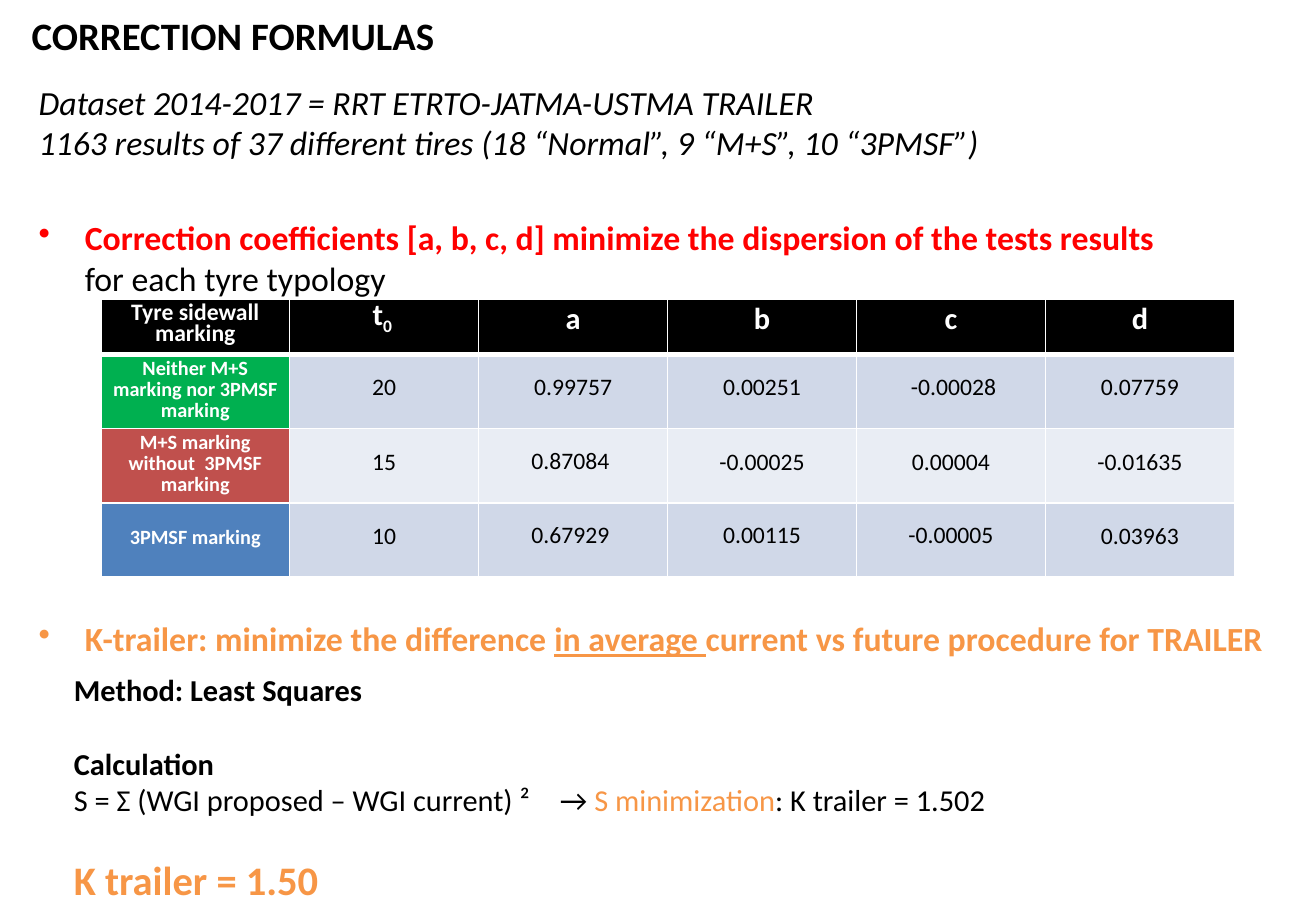
from dataclasses import dataclass, field
from typing import Any

from lxml import etree
from pptx import Presentation
from pptx import util as u
from pptx.dml.color import RGBColor
from pptx.enum import text
from pptx.oxml import ns


@dataclass(frozen=True)
class Theme:
    font: str = "Calibri"
    black: str = "000000"
    white: str = "FFFFFF"
    red: str = "FF0000"
    orange: str = "F79646"
    markings: tuple[str, ...] = ("00B050", "C0504D", "4F81BD")
    bands: tuple[str, ...] = ("D0D8E8", "E9EDF4")
    title: int = 23
    lead: int = 20
    body: int = 18
    result: int = 24
    value: int = 14
    marking: int = 12


THEME = Theme()


@dataclass
class Span:
    """A piece of text; a newline in it becomes a line break."""
    words: str
    size: int = THEME.body
    color: str = THEME.black
    style: dict[str, bool] = field(default_factory=dict)
    baseline: int = 0


@dataclass
class Para:
    spans: list[Span]
    layout: dict[str, Any] = field(default_factory=dict)
    bullet: bool = False


@dataclass
class TextBox:
    place: tuple[float, float, float, float]
    paras: list[Para]
    frame: dict[str, Any] = field(default_factory=lambda: {"word_wrap": True})


BOLD = {"bold": True}
ITALIC = {"italic": True}

TEXT_BOXES = [
    # Dataset and first bullet
    TextBox((0.22, 0.62, 10.17, 1.84), [
        Para([Span("Dataset 2014-2017 = RRT ETRTO-JATMA-USTMA TRAILER\n"
                   "1163 results of 37 different tires (18 “Normal”, 9 “M+S”, 10 “3PMSF”)",
                   THEME.lead, style=ITALIC)]),
        Para([Span("Correction coefficients [a, b, c, d] minimize the dispersion "
                   "of the tests results\n", THEME.lead, THEME.red, BOLD),
              Span("for each tyre typology", THEME.lead)],
             {"space_before": u.Pt(32.4)}, bullet=True),
    ]),
    # Title
    TextBox((0.14, 0.07, 4.9, 0.44),
            [Para([Span("CORRECTION FORMULAS", THEME.title, style=BOLD)])],
            {"word_wrap": False, "vertical_anchor": text.MSO_ANCHOR.MIDDLE,
             "margin_left": u.Inches(0.12), "margin_right": u.Inches(0.12),
             "margin_top": u.Inches(0.06), "margin_bottom": u.Inches(0.06)}),
    # Method, calculation and result
    TextBox((0.51, 5.48, 9.49, 2.02), [
        Para([Span("Method: Least Squares", style=BOLD)]),
        Para([Span("Calculation", style=BOLD)], {"space_before": u.Pt(22)}),
        Para([Span("S = Σ (WGI proposed – WGI current) ²\t→ "),
              Span("S minimization", color=THEME.orange),
              Span(": K trailer = 1.502")]),
        Para([Span("K trailer = 1.50", THEME.result, THEME.orange, BOLD)],
             {"space_before": u.Pt(22)}),
    ]),
    # Second bullet
    TextBox((0.22, 5.04, 10.4, 0.44), [
        Para([Span("K-trailer: minimize the difference ", THEME.lead, THEME.orange, BOLD),
              Span("in average ", THEME.lead, THEME.orange, {"bold": True, "underline": True}),
              Span("current vs future procedure for TRAILER",
                   THEME.lead, THEME.orange, BOLD)], bullet=True),
    ]),
]

HEADINGS = ["Tyre sidewall marking", "t", "a", "b", "c", "d"]
COEFFICIENTS = [
    ["Neither M+S marking nor 3PMSF marking",
     "20", "0.99757", "0.00251", " -0.00028", "0.07759"],
    ["M+S marking without  3PMSF marking",
     "15", "0.87084 ", "-0.00025", "0.00004", "-0.01635"],
    ["3PMSF marking", "10", "0.67929 ", "0.00115", "-0.00005", "0.03963"],
]
TIGHT_CELLS = {(2, 2), (3, 2), (3, 3), (3, 4)}
CELL_LAYOUT = {"alignment": text.PP_ALIGN.CENTER, "line_spacing": u.Pt(12.5),
               "space_before": u.Pt(3), "space_after": u.Pt(12)}
TIGHT_LAYOUT = CELL_LAYOUT | {"line_spacing": u.Pt(11.5), "space_before": u.Pt(0)}
CELL_FORMAT = {"vertical_anchor": text.MSO_ANCHOR.MIDDLE,
               "margin_left": u.Inches(0.07), "margin_right": u.Inches(0.07),
               "margin_top": 0, "margin_bottom": 0}


def apply(target: Any, values: dict[str, Any]) -> None:
    for name, value in values.items():
        setattr(target, name, value)


def write_span(para: Any, span: Span) -> None:
    for index, line in enumerate(span.words.split("\n")):
        if index:
            para.add_line_break()
        if not line:
            continue
        run = para.add_run()
        run.text = line
        apply(run.font, {"name": THEME.font, "size": u.Pt(span.size)} | span.style)
        run.font.color.rgb = RGBColor.from_string(span.color)
        if span.baseline:
            run.font._element.set("baseline", str(span.baseline * 1000))


def write_paras(frame: Any, paras: list[Para]) -> None:
    for index, content in enumerate(paras):
        para = frame.add_paragraph() if index else frame.paragraphs[0]
        if content.bullet:
            props = para._p.get_or_add_pPr()
            props.set("marL", str(u.Inches(0.38)))
            props.set("indent", str(u.Inches(-0.38)))
            etree.SubElement(props, ns.qn("a:buChar"), char="•")
        apply(para, content.layout)
        for span in content.spans:
            write_span(para, span)


def add_text_box(page: Any, item: TextBox) -> None:
    box = page.shapes.add_textbox(*map(u.Inches, item.place))
    apply(box.text_frame, item.frame)
    write_paras(box.text_frame, item.paras)


def add_borders(cell: Any, row: int) -> None:
    """White rules, thicker between the heading and the first row."""
    props = cell._tc.get_or_add_tcPr()
    thick = {"T": row == 1, "B": row == 0}
    for position, side in enumerate("LRTB"):
        width = u.Pt(3 if thick.get(side) else 1)
        line = etree.Element(ns.qn(f"a:ln{side}"), w=str(width))
        fill = etree.SubElement(line, ns.qn("a:solidFill"))
        etree.SubElement(fill, ns.qn("a:srgbClr"), val=THEME.white)
        props.insert(position, line)


def cell_spans(words: str, row: int, column: int) -> list[Span]:
    if row == 0:
        size = THEME.body if column else THEME.value
        spans = [Span(words, size, THEME.white, BOLD)]
        if words == "t":
            spans.append(Span("0 ", size, THEME.white, BOLD, baseline=-25))
        return spans
    if column == 0:
        return [Span(words, THEME.marking, THEME.white, BOLD)]
    return [Span(words, THEME.value)]


def cell_fill(row: int, column: int) -> str:
    if row == 0:
        return THEME.black
    return THEME.bands[(row - 1) % 2] if column else THEME.markings[row - 1]


def add_coefficient_table(page: Any) -> None:
    rows = [HEADINGS, *COEFFICIENTS]
    place = map(u.Inches, (0.83, 2.46, 9.33, 2.29))
    table = page.shapes.add_table(len(rows), len(HEADINGS), *place).table
    for row, words_in_row in enumerate(rows):
        table.rows[row].height = u.Inches(0.61 if row else 0.46)
        for column, words in enumerate(words_in_row):
            cell = table.cell(row, column)
            apply(cell, CELL_FORMAT)
            cell.fill.solid()
            cell.fill.fore_color.rgb = RGBColor.from_string(cell_fill(row, column))
            add_borders(cell, row)
            layout = TIGHT_LAYOUT if (row, column) in TIGHT_CELLS else CELL_LAYOUT
            if layout is CELL_LAYOUT:
                layout = CELL_LAYOUT | {"space_before": u.Pt(0)}
            write_paras(cell.text_frame, [Para(cell_spans(words, row, column), layout)])


def main() -> None:
    deck = Presentation()
    apply(deck, {"slide_width": u.Inches(10.83), "slide_height": u.Inches(7.5)})
    page = deck.slides.add_slide(deck.slide_layouts[6])
    for item in TEXT_BOXES:
        add_text_box(page, item)
    add_coefficient_table(page)
    deck.save("out.pptx")


if __name__ == "__main__":
    main()
